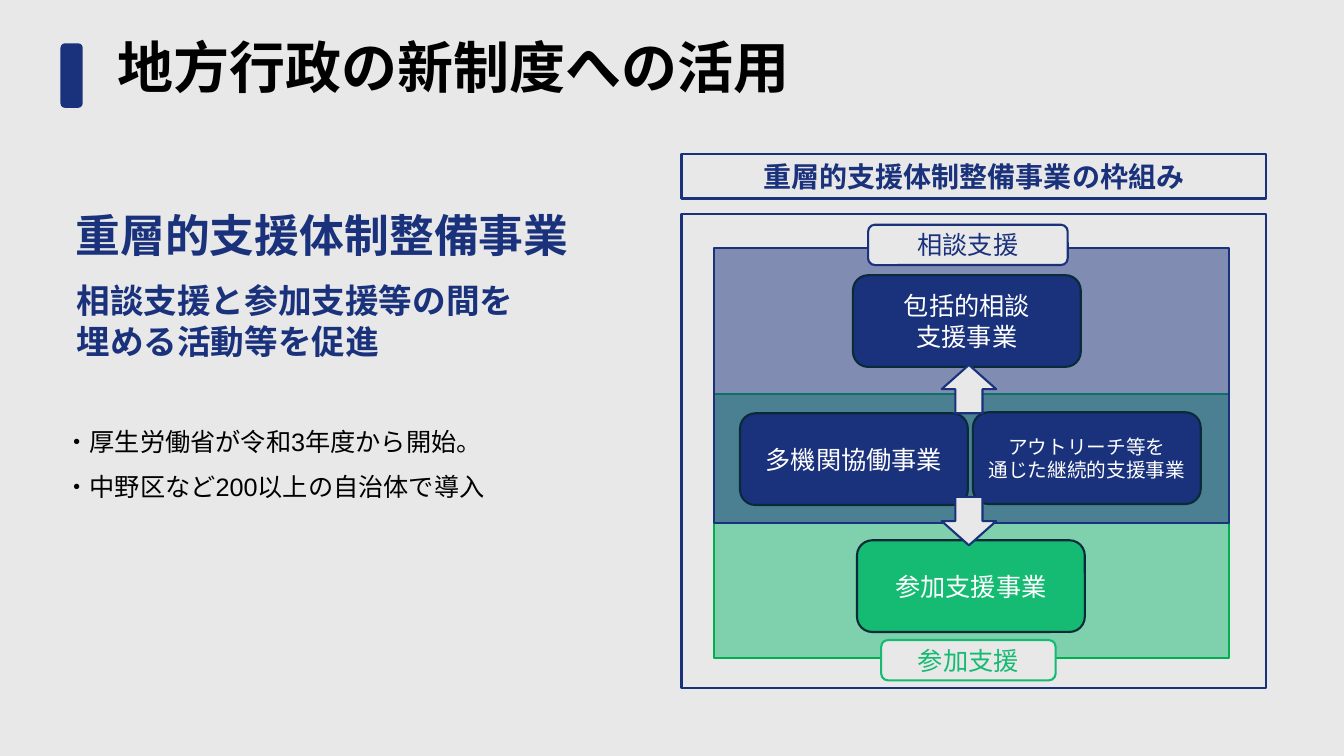
import pptx
import pptx.util
import pptx.dml.color
import pptx.enum.shapes
import pptx.enum.text
import pptx.oxml.ns
import lxml.etree

Inches = pptx.util.Inches
SHAPE = pptx.enum.shapes.MSO_SHAPE
ALIGN = pptx.enum.text.PP_ALIGN
ANCHOR = pptx.enum.text.MSO_ANCHOR

NAVY, GREEN, EDGE = "1A317C", "15BB72", "092A39"
GREY, WHITE, BLACK = "E8E8E8", "FFFFFF", "000000"
JP = "Noto Sans CJK JP"


def rgb(value):
    """Turn a hex string into a colour."""
    return pptx.dml.color.RGBColor.from_string(value)


def add_sub(parent, tag, **attrs):
    """Append a DrawingML element to its parent."""
    return lxml.etree.SubElement(parent, pptx.oxml.ns.qn(tag), attrs)


def write(tf, lines, size, color, font=JP, bold=False, align=ALIGN.LEFT,
          anchor=ANCHOR.TOP, spacing=None):
    """Write one paragraph per line in a text frame."""
    tf.word_wrap = True
    tf.vertical_anchor = anchor
    for i, line in enumerate(lines):
        p = tf.add_paragraph() if i else tf.paragraphs[0]
        p.alignment = align
        if spacing:
            p.line_spacing = spacing
        r = p.add_run()
        r.text = line
        fmt = {"size": pptx.util.Pt(size), "bold": bold, "name": font}
        for name, value in fmt.items():
            setattr(r.font, name, value)
        r.font.color.rgb = rgb(color)
        add_sub(r.font._element, "a:ea", typeface=JP)


def add_box(s, kind, box, fill=None, line=None, alpha=None):
    """Add a preset shape at a box given in inches."""
    sp = s.shapes.add_shape(kind, *map(Inches, box))
    sp.shadow.inherit = False
    if fill:
        sp.fill.solid()
        sp.fill.fore_color.rgb = rgb(fill)
        if alpha:
            clr = sp.fill._xPr.find(".//" + pptx.oxml.ns.qn("a:srgbClr"))
            add_sub(clr, "a:alpha", val=str(alpha * 1000))
    else:
        sp.fill.background()
    if line:
        sp.line.color.rgb = rgb(line)
        sp.line.width = pptx.util.Pt(1.5)
    else:
        sp.line.fill.background()
    return sp


def add_label(s, kind, box, lines, size, color, fill=None, line=None, bold=False):
    """Add a shape with centred text."""
    sp = add_box(s, kind, box, fill, line)
    write(sp.text_frame, lines, size, color, bold=bold, align=ALIGN.CENTER,
          anchor=ANCHOR.MIDDLE)


def add_text(s, box, lines, size, color, **fmt):
    """Add a text box in Arial."""
    tb = s.shapes.add_textbox(*map(Inches, box))
    write(tb.text_frame, lines, size, color, font="Arial", **fmt)


def add_header(s, x, y):
    """Place the accent bar and the slide title."""
    bar = add_box(s, SHAPE.ROUNDED_RECTANGLE, (x, y, 0.22, 0.64), NAVY)
    bar.adjustments[0] = 0.2
    add_text(s, (x + 0.47, y - 0.08, 11.34, 0.84), ["地方行政の新制度への活用"], 40,
             BLACK, bold=True, spacing=0.9)


def add_summary(s, x, y):
    """Place the programme name, its aim and the notes."""
    add_text(s, (x + 0.11, y, 5.55, 0.83), ["重層的支援体制整備事業"], 32, NAVY,
             bold=True, spacing=1.5)
    add_text(s, (x + 0.12, y + 0.99, 6.01, 0.91),
             ["相談支援と参加支援等の間を", "埋める活動等を促進"], 24, NAVY, bold=True)
    add_text(s, (x, y + 2.29, 5.79, 0.96),
             ["・厚生労働省が令和3年度から開始。", "・中野区など200以上の自治体で導入"],
             18, BLACK, spacing=1.5)


def add_framework(s, x, y, w):
    """Place the framework diagram with overlapping support areas."""
    add_box(s, SHAPE.RECTANGLE, (x, y + 0.59, w, 4.71), GREY, NAVY)
    add_label(s, SHAPE.RECTANGLE, (x, y, w, 0.44), ["重層的支援体制整備事業の枠組み"],
              20, NAVY, line=NAVY, bold=True)

    for top, h, fill, line in ((2.38, 2.62, GREEN, "00B050"), (0.93, 2.73, NAVY, NAVY)):
        add_box(s, SHAPE.RECTANGLE, (x + 0.32, y + top, 5.11, h), fill, line, alpha=50)

    projects = (
        (2.89, 2.56, ["アウトリーチ等を", "通じた継続的支援事業"], 14, NAVY),
        (1.7, 1.2, ["包括的相談", "支援事業"], 18, NAVY),
        (0.58, 2.57, ["多機関協働事業"], 18, NAVY),
        (1.74, 3.83, ["参加支援事業"], 18, GREEN),
    )
    for left, top, lines, size, fill in projects:
        add_label(s, SHAPE.ROUNDED_RECTANGLE, (x + left, y + top, 2.26, 0.91), lines,
                  size, WHITE, fill, EDGE)

    areas = ((1.98, 4.82, 1.73, "参加支援", GREEN), (1.85, 0.7, 1.98, "相談支援", NAVY))
    for left, top, width, name, color in areas:
        add_label(s, SHAPE.ROUNDED_RECTANGLE, (x + left, y + top, width, 0.4), [name],
                  18, color, GREY, color)

    for top, turn in ((3.4, 0), (2.09, 180)):
        arrow = add_box(s, SHAPE.DOWN_ARROW, (x + 2.58, y + top, 0.54, 0.48), GREY, NAVY)
        arrow.rotation = turn


def main():
    """Build the slide and save it."""
    prs = pptx.Presentation()
    prs.slide_width, prs.slide_height = Inches(13.33), Inches(7.5)
    s = prs.slides.add_slide(prs.slide_layouts[6])
    s.background.fill.solid()
    s.background.fill.fore_color.rgb = rgb(GREY)
    add_header(s, 0.6, 0.43)
    add_framework(s, 6.76, 1.53, 5.8)
    add_summary(s, 0.54, 1.74)
    prs.save("out.pptx")


if __name__ == "__main__":
    main()
